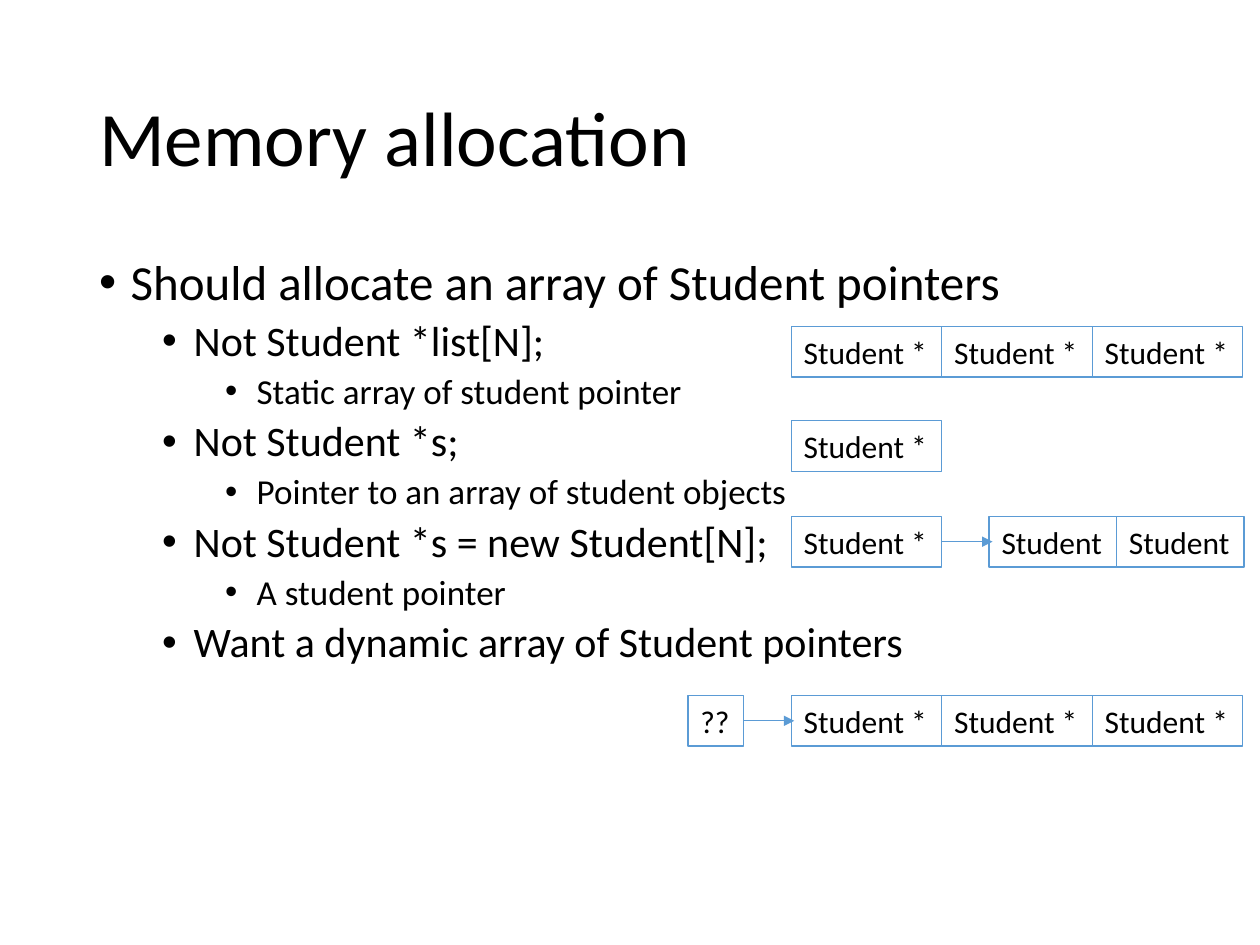
from dataclasses import dataclass

import pptx
import pptx.dml.color
import pptx.enum.shapes
import pptx.enum.text
import pptx.oxml.ns
import pptx.util
from lxml import etree
from pptx.util import Cm, Pt

BLACK = pptx.dml.color.RGBColor(0x00, 0x00, 0x00)
BLUE = pptx.dml.color.RGBColor(0x5B, 0x9B, 0xD5)
FONT = "Calibri"
SIZES = (28, 24, 20)
HIGH = 1.02
WIDE = 3.035
LEFT = 15.95
PTR = "Student *"


@dataclass
class Item:
    level: int
    text: str


@dataclass
class Row:
    """Adjoining cells with the same text, placed in centimetres."""
    left: float
    top: float
    width: float
    text: str
    count: int = 1


@dataclass
class Arrow:
    left: float
    top: float


ITEMS = [
    Item(0, "Should allocate an array of Student pointers"),
    Item(1, "Not Student *list[N];"),
    Item(2, "Static array of student pointer"),
    Item(1, "Not Student *s;"),
    Item(2, "Pointer to an array of student objects"),
    Item(1, "Not Student *s = new Student[N];"),
    Item(2, "A student pointer"),
    Item(1, "Want a dynamic array of Student pointers"),
]
ROWS = [
    Row(LEFT, 6.58, WIDE, PTR, 3),
    Row(LEFT, 8.48, WIDE, PTR),
    Row(LEFT, 10.41, WIDE, PTR),
    Row(19.94, 10.41, 2.57, "Student", 2),
    Row(13.87, 14.02, 1.12, "??"),
    Row(LEFT, 14.02, WIDE, PTR, 3),
]
ARROWS = [Arrow(18.99, 10.41), Arrow(14.99, 14.02)]


def add_run(para, text: str, size: int) -> None:
    run = para.add_run()
    run.text = text
    run.font.name = FONT
    run.font.size = Pt(size)
    run.font.color.rgb = BLACK


def add_bullet(para, level: int) -> None:
    props = para._p.get_or_add_pPr()
    props.set("marL", str(Cm(0.635 + 1.27 * level)))
    props.set("indent", str(-Cm(0.635)))
    for tag, key, value in (("a:buFont", "typeface", "Arial"),
                            ("a:buChar", "char", "•")):
        etree.SubElement(props, pptx.oxml.ns.qn(tag)).set(key, value)


def add_title(slide, text: str) -> None:
    frame = slide.shapes.add_textbox(
        Cm(1.75), Cm(1.02), Cm(21.9), Cm(3.68)).text_frame
    frame.word_wrap = True
    frame.vertical_anchor = pptx.enum.text.MSO_ANCHOR.MIDDLE
    para = frame.paragraphs[0]
    para.line_spacing = 0.9
    add_run(para, text, 44)


def add_list(slide, items: list[Item]) -> None:
    frame = slide.shapes.add_textbox(
        Cm(1.75), Cm(5.08), Cm(21.9), Cm(12.09)).text_frame
    frame.word_wrap = True
    for i, item in enumerate(items):
        para = frame.add_paragraph() if i else frame.paragraphs[0]
        para.level = item.level
        add_bullet(para, item.level)
        para.line_spacing = 0.9
        para.space_before = Pt(5 if i else 0)
        add_run(para, item.text, SIZES[item.level])


def add_row(slide, row: Row) -> None:
    for i in range(row.count):
        cell = slide.shapes.add_shape(
            pptx.enum.shapes.MSO_SHAPE.RECTANGLE,
            Cm(row.left + i * row.width), Cm(row.top),
            Cm(row.width), Cm(HIGH))
        cell.shadow.inherit = False
        cell.fill.background()
        cell.line.color.rgb = BLUE
        cell.line.width = Pt(0.75)
        frame = cell.text_frame
        frame.word_wrap = False
        frame.auto_size = pptx.enum.text.MSO_AUTO_SIZE.SHAPE_TO_FIT_TEXT
        frame.vertical_anchor = pptx.enum.text.MSO_ANCHOR.TOP
        para = frame.paragraphs[0]
        para.alignment = pptx.enum.text.PP_ALIGN.LEFT
        add_run(para, row.text, 18)


def add_arrow(slide, arrow: Arrow) -> None:
    """Point right from the middle of a cell's edge."""
    mid = Cm(arrow.top + HIGH / 2)
    line = slide.shapes.add_connector(
        pptx.enum.shapes.MSO_CONNECTOR.STRAIGHT,
        Cm(arrow.left), mid, Cm(arrow.left + 1.02), mid)
    line.line.color.rgb = BLUE
    line.line.width = Pt(0.5)
    qn = pptx.oxml.ns.qn
    etree.SubElement(line.line._get_or_add_ln(),
                     qn("a:tailEnd")).set("type", "triangle")
    etree.SubElement(line._element.spPr, qn("a:effectLst"))


def main() -> None:
    deck = pptx.Presentation()
    deck.slide_width, deck.slide_height = Cm(25.4), Cm(19.05)
    slide = deck.slides.add_slide(deck.slide_layouts[6])
    add_title(slide, "Memory allocation")
    add_list(slide, ITEMS)
    for row in ROWS:
        add_row(slide, row)
    for arrow in ARROWS:
        add_arrow(slide, arrow)
    deck.save("out.pptx")


if __name__ == "__main__":
    main()
